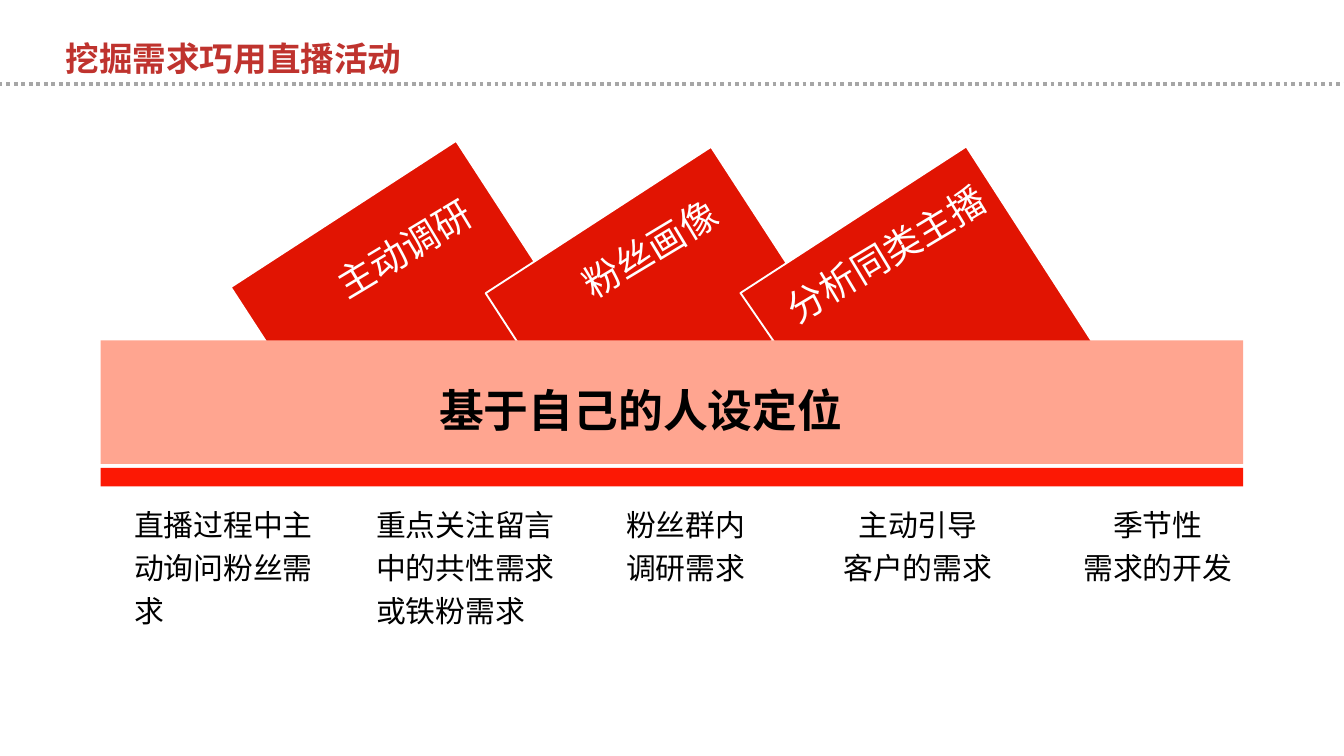
from pptx import Presentation
from pptx.dml.color import RGBColor
from pptx.enum import dml, shapes, text
from pptx.oxml import ns
from pptx.util import Pt
from lxml import etree

LEFT, CENTER, JUSTIFY = text.PP_ALIGN.LEFT, text.PP_ALIGN.CENTER, text.PP_ALIGN.JUSTIFY


def color(hex_code):
    return RGBColor.from_string(hex_code)


class Deck:
    font = "Noto Sans CJK SC"
    red, pink, bright_red = "E11402", "FFA590", "FC1804"
    title_red, white, black, gray = "BF332E", "FFFFFF", "000000", "A6A6A6"

    def __init__(self, width, height):
        self.presentation = Presentation()
        self.presentation.slide_width = Pt(width)
        self.presentation.slide_height = Pt(height)
        self.slide = self.presentation.slides.add_slide(self.presentation.slide_layouts[6])

    def paint(self, shape, fill, outline=None):
        shape.shadow.inherit = False
        shape.fill.solid()
        shape.fill.fore_color.rgb = color(fill)
        if outline:
            shape.line.color.rgb = color(outline)
            shape.line.width = Pt(1)
        else:
            shape.line.fill.background()

    def rectangle(self, box, fill, outline=None, rotation=0):
        shape = self.slide.shapes.add_shape(shapes.MSO_SHAPE.RECTANGLE, *map(Pt, box))
        shape.rotation = rotation
        self.paint(shape, fill, outline)

    def polygon(self, points, fill, outline):
        start, *rest = [(Pt(x), Pt(y)) for x, y in points]
        builder = self.slide.shapes.build_freeform(*start)
        builder.add_line_segments(rest, close=True)
        self.paint(builder.convert_to_shape(), fill, outline)

    def label(self, box, wording, size, hue=black, align=LEFT, bold=False,
              spacing=None, rotation=0, wrap=True):
        label = self.slide.shapes.add_textbox(*map(Pt, box))
        label.rotation = rotation
        frame = label.text_frame
        frame.text = wording
        frame.word_wrap = wrap
        frame.auto_size = text.MSO_AUTO_SIZE.SHAPE_TO_FIT_TEXT
        for paragraph in frame.paragraphs:
            paragraph.alignment = align
            paragraph.line_spacing = spacing
            for run in paragraph.runs:
                run.font.size = Pt(size)
                run.font.bold = bold
                run.font.color.rgb = color(hue)
                run.font.name = self.font
                east_asian = etree.SubElement(run.font._element, ns.qn("a:ea"))
                east_asian.set("typeface", self.font)

    def dotted_rule(self, left, right, y):
        rule = self.slide.shapes.add_connector(
            shapes.MSO_CONNECTOR.STRAIGHT, Pt(left), Pt(y), Pt(right), Pt(y))
        rule.line.color.rgb = color(self.gray)
        rule.line.width = Pt(2)
        rule.line.dash_style = dml.MSO_LINE.ROUND_DOT
        etree.SubElement(rule._element.spPr, ns.qn("a:effectLst"))


def main():
    deck = Deck(720, 405)

    # Tilted cards rising from behind the base
    for card in [(141.8, 105.8, 144, 109.4), (277.2, 109.4, 144, 105.1)]:
        deck.rectangle(card, deck.red, deck.white, rotation=327)
    deck.polygon([(396.7, 157), (517.7, 78.5), (588.2, 187.9), (552.2, 211),
                  (473.8, 205.9), (423.4, 195.8)], deck.red, deck.white)

    deck.rectangle((54, 182.4, 612, 66.2), deck.pink)
    deck.rectangle((54, 250.6, 612, 10), deck.bright_red)

    for left, width, method, wrap in [(169.2, 94.3, "主动调研", False),
                                      (301, 94.3, "粉丝画像", False),
                                      (406.8, 145.4, "分析同类主播", True)]:
        deck.label((left, 117.4, width, 31.5), method, 20, deck.white,
                   rotation=329, wrap=wrap)

    deck.label((228.2, 201.6, 262.8, 36), "基于自己的人设定位", 24, align=JUSTIFY, bold=True)

    for left, width, height, action, align in [
            (64.8, 110.2, 77, "直播过程中主动询问粉丝需求", LEFT),
            (194.4, 114.5, 77, "重点关注留言中的共性需求或铁粉需求", LEFT),
            (328.3, 89.3, 54, "粉丝群内调研需求", LEFT),
            (437, 109.4, 54, "主动引导\n客户的需求", CENTER),
            (565.9, 108.7, 54, "季节性\n需求的开发", CENTER)]:
        deck.label((left, 264.2, width, height), action, 16, align=align, spacing=1.2)

    deck.label((28, 16.6, 220.3, 29), "挖掘需求巧用直播活动", 18, deck.title_red,
               align=JUSTIFY, bold=True)
    deck.dotted_rule(-0.7, 720.7, 45.2)

    deck.presentation.save("out.pptx")


if __name__ == "__main__":
    main()
